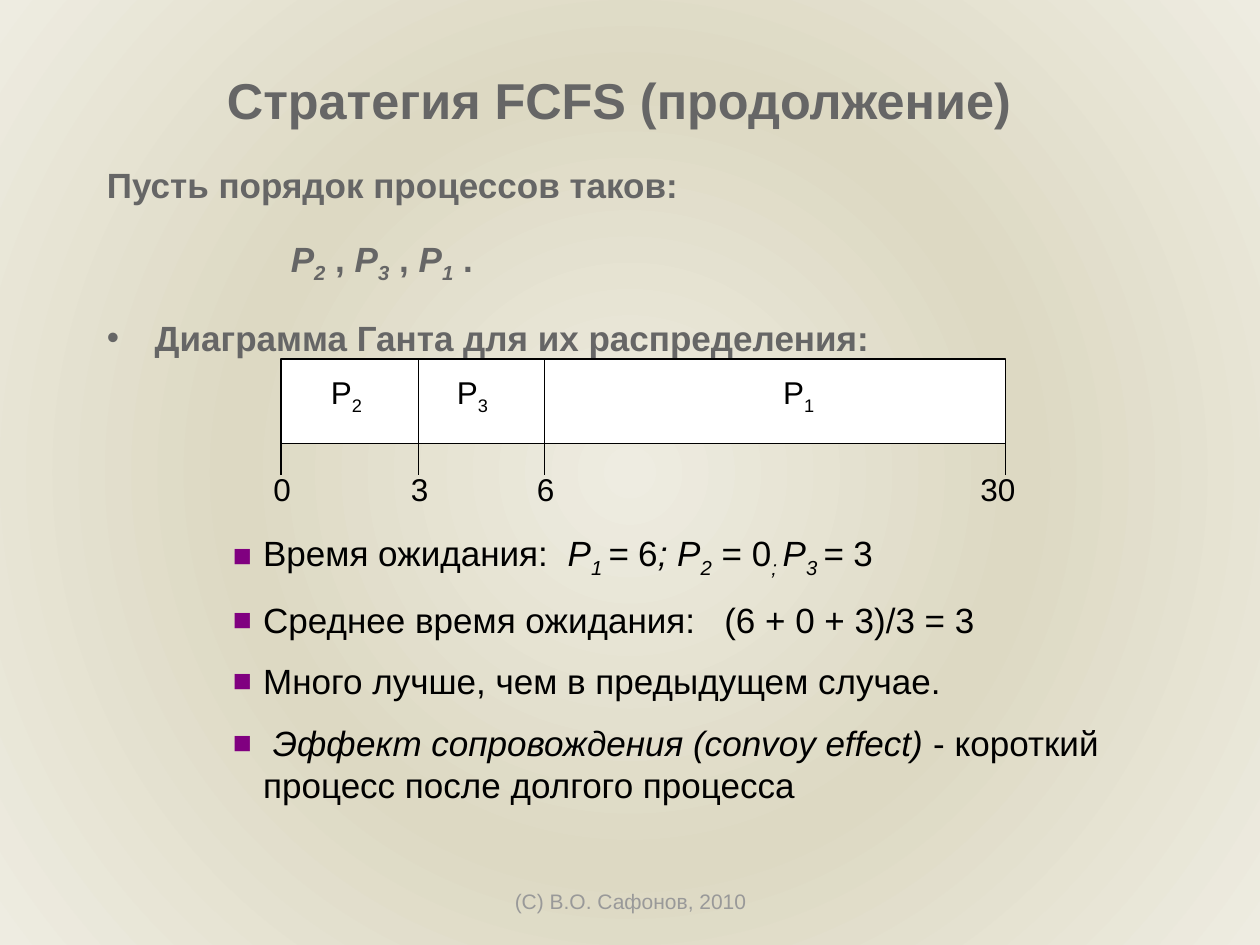
from dataclasses import dataclass

from lxml import etree
from pptx import Presentation
from pptx import util as u
from pptx.dml.color import RGBColor
from pptx.enum import shapes as sh
from pptx.enum import text as tx
from pptx.oxml import parse_xml
from pptx.oxml.ns import nsdecls, qn

FONT = "Arial"
GREY = "666666"
BLACK = "000000"


@dataclass
class Bar:
    name: str
    start: float
    end: float
    mid: float


@dataclass
class Tick:
    time: str
    x: float
    mid: float


def color(code: str) -> RGBColor:
    return RGBColor.from_string(code)


def add_bullet(para, mark: str, tint: str, scale: int) -> None:
    props = para._p.get_or_add_pPr()
    tone = etree.SubElement(props, qn("a:buClr"))
    etree.SubElement(tone, qn("a:srgbClr"), val=tint)
    etree.SubElement(props, qn("a:buSzPct"), val=str(scale * 1000))
    etree.SubElement(props, qn("a:buFont"), typeface=FONT)
    etree.SubElement(props, qn("a:buChar"), char=mark)


def set_text(para, parts, size=20, tint=BLACK, bold=False, align=None,
             before=0, left=0, hang=0, bullet=None) -> None:
    """Fill a paragraph; parts are (text, style), i = italic, s = subscript."""
    if bullet:
        add_bullet(para, *bullet)
    if left:
        props = para._p.get_or_add_pPr()
        props.set("marL", str(u.Inches(left)))
        props.set("indent", str(-u.Inches(hang)))
    if before:
        para.space_before = u.Pt(before)
    para.alignment = align
    for words, style in parts:
        run = para.add_run()
        run.text = words
        font = run.font
        font.name, font.size, font.bold = FONT, u.Pt(size), bold
        font.italic = "i" in style
        font.color.rgb = color(tint)
        if "s" in style:
            run._r.get_or_add_rPr().set("baseline", "-25000")


def add_box(parent, x, y, w, h, wrap=True, anchor=tx.MSO_ANCHOR.TOP):
    box = parent.add_textbox(*map(u.Inches, (x, y, w, h)))
    frame = box.text_frame
    frame.word_wrap = wrap
    frame.vertical_anchor = anchor
    return frame


def add_label(parent, parts, mid: float, y: float, w: float) -> None:
    frame = add_box(parent, mid - w / 2, y, w, 0.4, False, tx.MSO_ANCHOR.MIDDLE)
    set_text(frame.paragraphs[0], parts, size=18, align=tx.PP_ALIGN.CENTER)


def add_line(parent, x: float, top: float, end: float) -> None:
    line = parent.add_connector(sh.MSO_CONNECTOR.STRAIGHT,
                                *map(u.Inches, (x, top, x, end)))
    line.line.color.rgb = color(BLACK)
    line.line.width = u.Pt(0.75)
    etree.SubElement(line._element.spPr, qn("a:effectLst"))


def set_back(slide) -> None:
    slide.background.fill.solid()
    stops = "".join(
        f'<a:gs pos="{pos * 1000}"><a:srgbClr val="{tint}"/></a:gs>'
        for pos, tint in ((0, "EEECE1"), (50, "DDD9C3"), (100, "EEECE1")))
    grad = parse_xml(
        f'<a:gradFill {nsdecls("a")} rotWithShape="1"><a:gsLst>{stops}</a:gsLst>'
        '<a:path path="circle"><a:fillToRect l="50000" t="50000" r="50000" '
        'b="50000"/></a:path></a:gradFill>')
    solid = next(slide._element.iter(qn("a:solidFill")))
    solid.getparent().replace(solid, grad)


def add_gantt(slide) -> None:
    top, base, tail = 2.85, 3.52, 3.77
    bars = [Bar("2", 2.23, 3.32, 2.75), Bar("3", 3.32, 4.32, 3.75),
            Bar("1", 4.32, 7.98, 6.34)]
    ticks = [Tick("0", 2.23, 2.24), Tick("3", 3.32, 3.33),
             Tick("6", 4.32, 4.33), Tick("30", 7.98, 7.92)]
    group = slide.shapes.add_group_shape().shapes
    start, end = bars[0].start, bars[-1].end
    frame = group.add_shape(sh.MSO_SHAPE.RECTANGLE, *map(
        u.Inches, (start, top, end - start, base - top)))
    frame.shadow.inherit = False
    frame.fill.solid()
    frame.fill.fore_color.rgb = color("FFFFFF")
    frame.line.color.rgb = color(BLACK)
    frame.line.width = u.Pt(0.75)
    for bar in bars:
        add_label(group, [("P", ""), (bar.name, "s")], bar.mid, 2.93, 0.46)
    for bar in bars[1:]:
        add_line(group, bar.start, top, base)
    for tick in ticks:
        add_line(group, tick.x, base, tail)
        add_label(group, [(tick.time, "")], tick.mid, 3.68, 0.48)


def main() -> None:
    deck = Presentation()
    deck.slide_width, deck.slide_height = u.Inches(10), u.Inches(7.5)
    slide = deck.slides.add_slide(deck.slide_layouts[5])
    set_back(slide)

    # Title
    title = slide.shapes.title
    title.left, title.top, title.width, title.height = map(
        u.Inches, (0.66, 0.49, 8.51, 0.6))
    title.text_frame.auto_size = tx.MSO_AUTO_SIZE.NONE
    title.text_frame.vertical_anchor = tx.MSO_ANCHOR.MIDDLE
    set_text(title.text_frame.paragraphs[0],
             [("Стратегия FCFS (продолжение)", "")], size=28.8, tint=GREY,
             bold=True, align=tx.PP_ALIGN.CENTER)

    # Process order
    body = add_box(slide.shapes, 0.75, 1.25, 8.86, 1.6)
    look = dict(tint=GREY, bold=True)
    set_text(body.paragraphs[0], [("Пусть порядок процессов таков:", "")], **look)
    set_text(body.add_paragraph(),
             [("P", "i"), ("2", "is"), (" , ", ""), ("P", "i"), ("3", "is"),
              (" , ", ""), ("P", "i"), ("1", "is"), (" .", "")],
             before=18, left=1.46, **look)
    set_text(body.add_paragraph(),
             [("Диаграмма Ганта для их распределения:", "")],
             before=18, left=0.38, hang=0.38, bullet=("•", GREY, 100), **look)

    add_gantt(slide)

    # Waiting times
    points = [
        [("Время ожидания:  ", ""), ("P", "i"), ("1 ", "is"), ("=", "i"),
         (" 6", ""), ("; P", "i"), ("2", "is"), (" = 0", ""), ("; ", "is"),
         ("P", "i"), ("3 ", "is"), ("= ", "i"), ("3", "")],
        [("Среднее время ожидания:   (6 + 0 + 3)/3 = 3", "")],
        [("Много лучше, чем в предыдущем случае.", "")],
        [(" Эффект сопровождения (convoy effect) ", "i"),
         ("- короткий процесс после долгого процесса", "")],
    ]
    notes = add_box(slide.shapes, 1.75, 4.17, 7.33, 2.27)
    for i, parts in enumerate(points):
        para = notes.add_paragraph() if i else notes.paragraphs[0]
        set_text(para, parts, before=11 if i else 0, left=0.24, hang=0.24,
                 bullet=("■", "800080", 90))

    # Footer
    foot = add_box(slide.shapes, 3.42, 6.95, 3.17, 0.4,
                   anchor=tx.MSO_ANCHOR.MIDDLE)
    set_text(foot.paragraphs[0], [("(C) В.О. Сафонов, 2010", "")], size=12,
             tint="999999", align=tx.PP_ALIGN.CENTER)

    deck.save("out.pptx")


if __name__ == "__main__":
    main()
